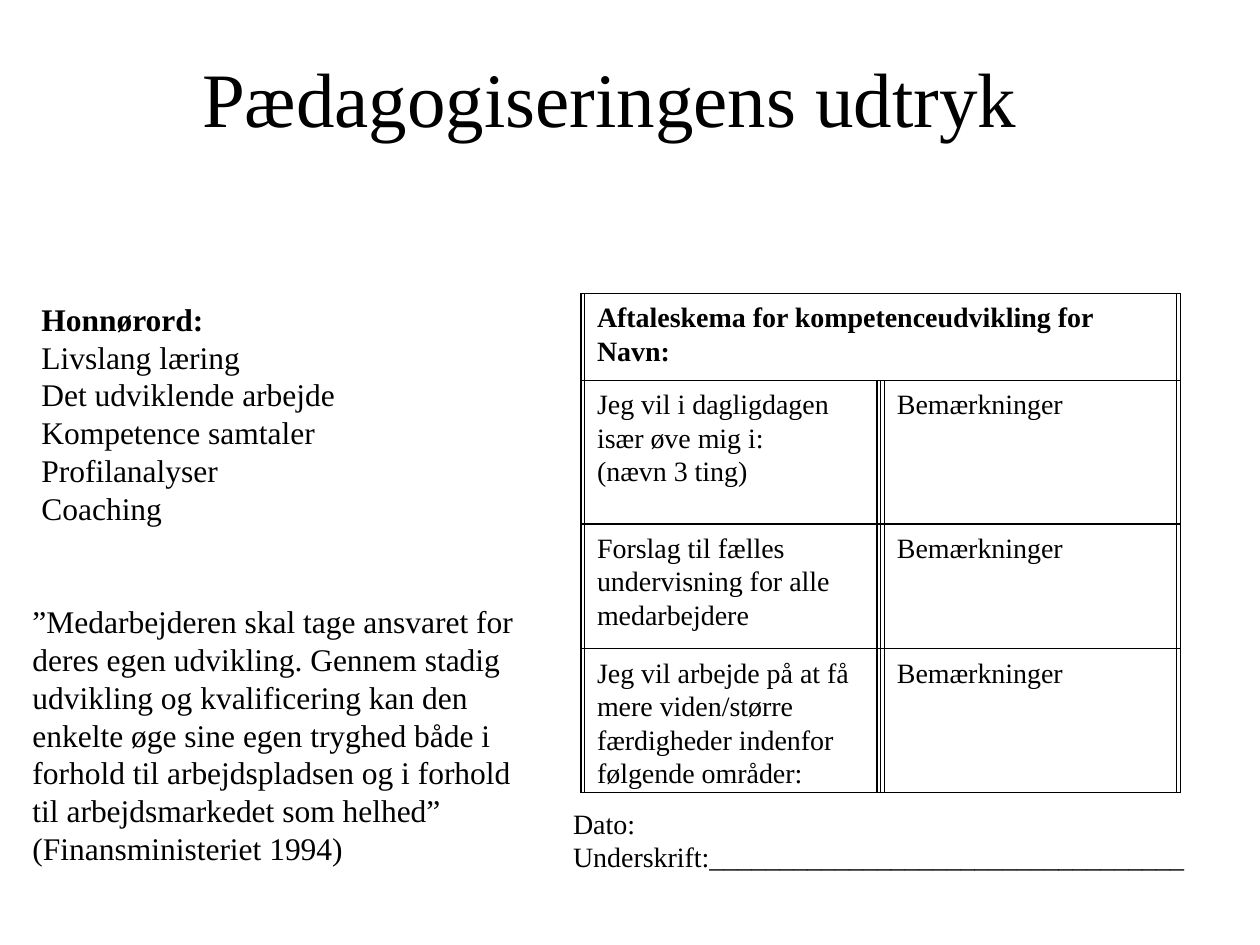
from pptx import Presentation
from pptx.dml.color import RGBColor
from pptx.enum import shapes, text
from pptx.util import Inches, Pt

FONT = "Times New Roman"
BLACK = "000000"
TABLE_LEFT, TABLE_TOP, COLUMN_WIDTH, BORDER_GAP = 4.61, 2.33, 2.38, 0.03
AGREEMENT_ROWS = [
    (0.69, ["Aftaleskema for kompetenceudvikling for\nNavn:"]),
    (1.14, ["Jeg vil i dagligdagen især øve mig i:\n(nævn 3 ting)", "Bemærkninger"]),
    (0.99, ["Forslag til fælles undervisning for alle medarbejdere", "Bemærkninger"]),
    (1.14, ["Jeg vil arbejde på at få mere viden/større færdigheder indenfor "
            "følgende områder:", "Bemærkninger"]),
]
BUZZWORDS = ("Honnørord:\nLivslang læring\nDet udviklende arbejde\n"
             "Kompetence samtaler\nProfilanalyser\nCoaching")
QUOTE = ("”Medarbejderen skal tage ansvaret for deres egen udvikling. Gennem stadig "
         "udvikling og kvalificering kan den enkelte øge sine egen tryghed både i "
         "forhold til arbejdspladsen og i forhold til arbejdsmarkedet som helhed” "
         "(Finansministeriet 1994)")
SIGNATURE = "Dato:\nUnderskrift:" + "_" * 34


def color(value):
    """Turn a hex string into a colour."""
    return RGBColor.from_string(value)


def write(box, content, size, align=text.PP_ALIGN.LEFT, bold_lines=0):
    """Fill a shape with text, the first lines of it bold."""
    frame = box.text_frame
    frame.word_wrap = True
    frame.text = content
    for index, paragraph in enumerate(frame.paragraphs):
        paragraph.alignment = align
        for span in paragraph.runs:
            span.font.name = FONT
            span.font.size = Pt(size)
            span.font.bold = index < bold_lines
            span.font.color.rgb = color(BLACK)


def add_title(page, content):
    """Place and fill the title."""
    title = page.shapes.title
    title.left, title.top = Inches(0.59), Inches(0.14)
    title.width, title.height = Inches(8.5), Inches(1.25)
    write(title, content, 44, text.PP_ALIGN.CENTER)
    title.text_frame.vertical_anchor = text.MSO_ANCHOR.MIDDLE


def add_text(page, left, top, width, height, content, size, **style):
    """Add a wrapped text box."""
    box = page.shapes.add_textbox(Inches(left), Inches(top), Inches(width), Inches(height))
    write(box, content, size, **style)


def add_outline(group, left, top, width, height, weight):
    """Add an unfilled rectangle to a group."""
    box = group.shapes.add_shape(shapes.MSO_SHAPE.RECTANGLE, Inches(left), Inches(top),
                                 Inches(width), Inches(height))
    box.shadow.inherit = False
    box.fill.background()
    box.line.color.rgb = color(BLACK)
    box.line.width = Pt(weight)
    return box


def add_agreement_form(page):
    """Draw the form with double vertical borders around its cells."""
    group = page.shapes.add_group_shape()
    top = TABLE_TOP
    for row, (height, cells) in enumerate(AGREEMENT_ROWS):
        width = 2 * COLUMN_WIDTH / len(cells)
        for column, content in enumerate(cells):
            left = TABLE_LEFT + column * width
            cell = add_outline(group, left + BORDER_GAP, top,
                               width - 2 * BORDER_GAP, height, 0.75)
            write(cell, content, 16, bold_lines=2 if row == 0 else 0)
            cell.text_frame.vertical_anchor = text.MSO_ANCHOR.TOP
            add_outline(group, left, top, width, height, 0)
        top += height
    add_outline(group, TABLE_LEFT, TABLE_TOP, 2 * COLUMN_WIDTH, top - TABLE_TOP, 0.87)


def main():
    """Build and save the slide."""
    deck = Presentation()
    deck.slide_width, deck.slide_height = Inches(10), Inches(7.5)
    page = deck.slides.add_slide(deck.slide_layouts[5])
    add_title(page, "Pædagogiseringens udtryk")
    add_agreement_form(page)
    add_text(page, 4.45, 6.35, 5.11, 0.63, SIGNATURE, 16, align=text.PP_ALIGN.JUSTIFY)
    add_text(page, 0.23, 2.33, 3.39, 1.9, BUZZWORDS, 18, bold_lines=1)
    add_text(page, 0.16, 4.73, 4.14, 2.22, QUOTE, 18)
    deck.save("out.pptx")


if __name__ == "__main__":
    main()
